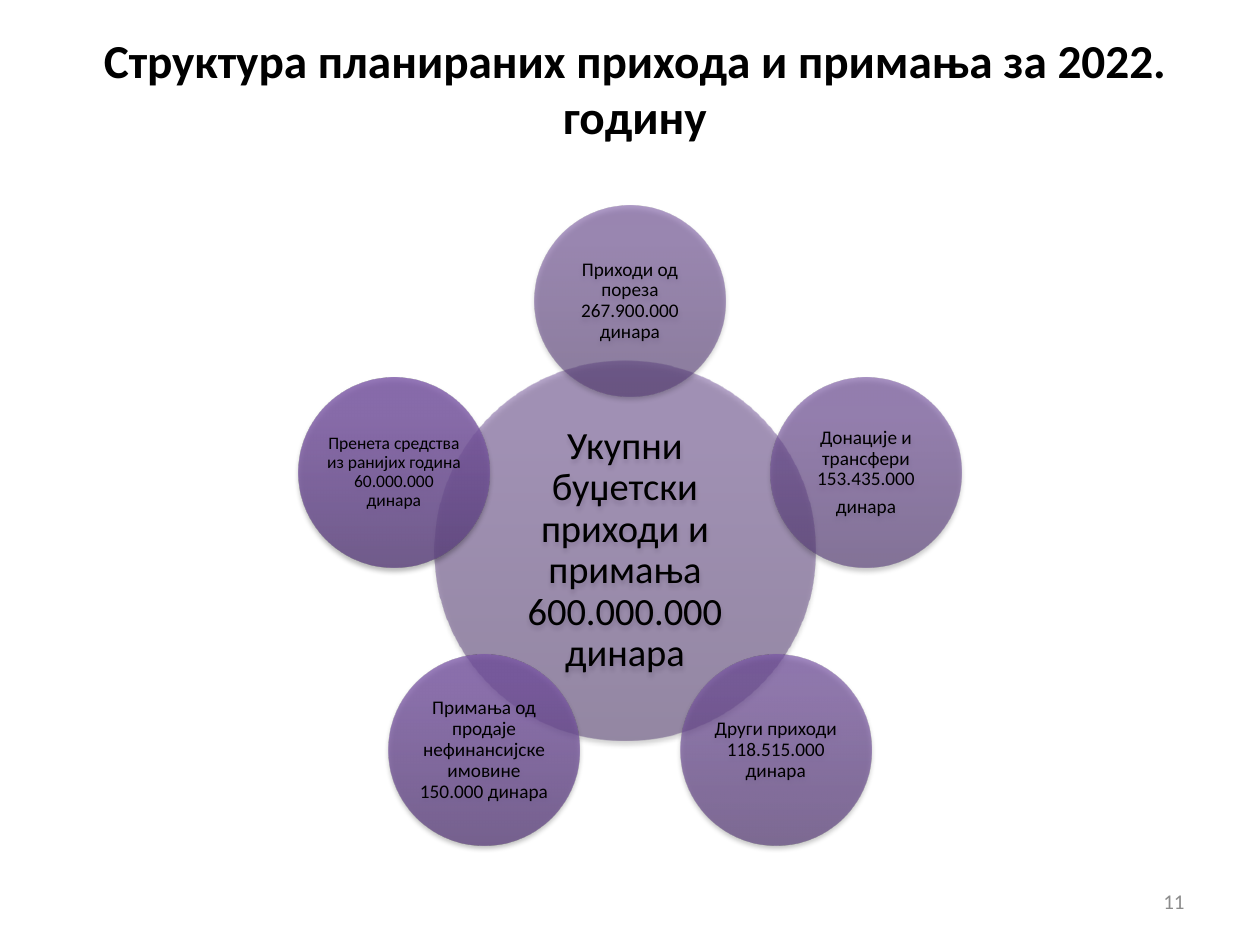
import math

from lxml import etree
from pptx import Presentation
from pptx.dml.color import RGBColor
from pptx.enum import shapes, text
from pptx.oxml import ns
from pptx.util import Inches, Pt

BLACK = RGBColor(0, 0, 0)
GRAY = RGBColor(0x8C, 0x8C, 0x8C)
FONT = "Calibri"

TITLE = "Структура планираних прихода и примања за 2022. годину"
PAGE_NUMBER = "11"

# Paragraphs, text size, gradient colours from bottom to top, opacity in percent
TOTAL = (["Укупни буџетски приходи и примања 600.000.000 динара"], 22,
         ("563D74", "705097", "704F99"), 50)
# Clockwise from the top
SOURCES = [
    (["Приходи од пореза 267.900.000 динара"], 11,
     ("583E77", "72519A", "73509C"), 56),
    (["Донације и трансфери 153.435.000", "динара"], 11,
     ("5A407A", "75539E", "7551A0"), 62),
    (["Други приходи 118.515.000 динара"], 11,
     ("5C417C", "7754A1", "7753A4"), 68),
    (["Примања од продаје нефинансијске имовине 150.000 динара"], 11,
     ("5E427E", "7956A4", "7A55A6"), 74),
    (["Пренета средства из ранијих година 60.000.000 динара"], 10,
     ("5F4580", "7C59A6", "7C58A8"), 80),
]
GRADIENT_STOPS = (0, 80, 100)

TOTAL_CENTER = (4.96, 4.37)
TOTAL_DIAMETER = 3.02
RING_CENTER = (5, 4.36)
RING_RADIUS = 1.97
SOURCE_DIAMETER = 1.51


def add_child(parent, tag, **attributes):
    child = etree.SubElement(parent, ns.qn(tag))
    for name, value in attributes.items():
        child.set(name, str(value))
    return child


def add_color(parent, color, opacity):
    element = add_child(parent, "a:srgbClr", val=color)
    add_child(element, "a:alpha", val=opacity * 1000)


def set_gradient(shape, colors, opacity):
    shape.fill.gradient()
    gradient = shape.element.spPr.find(ns.qn("a:gradFill"))
    for child in list(gradient):
        gradient.remove(child)
    stops = add_child(gradient, "a:gsLst")
    for position, color in zip(GRADIENT_STOPS, colors):
        add_color(add_child(stops, "a:gs", pos=position * 1000), color, opacity)
    add_child(gradient, "a:lin", ang=270 * 60000, scaled=0)


def set_soft_shadow(shape):
    shape.shadow.inherit = False
    effects = shape.element.spPr.find(ns.qn("a:effectLst"))
    shadow = add_child(effects, "a:outerShdw", blurRad=Pt(3.1), dist=Pt(1.8),
                       dir=90 * 60000, rotWithShape=0)
    add_color(shadow, "000000", 35)


def write(frame, paragraphs, size, color, alignment, bold=False):
    frame.word_wrap = True
    frame.vertical_anchor = text.MSO_ANCHOR.MIDDLE
    for index, content in enumerate(paragraphs):
        paragraph = frame.add_paragraph() if index else frame.paragraphs[0]
        paragraph.alignment = alignment
        run = paragraph.add_run()
        run.text = content
        run.font.name = FONT
        run.font.size = Pt(size)
        run.font.bold = bold
        run.font.color.rgb = color


def add_text_box(slide, box, *style, **options):
    shape = slide.shapes.add_textbox(*map(Inches, box))
    write(shape.text_frame, *style, **options)


def add_circle(slide, center, diameter, inset, item):
    paragraphs, size, colors, opacity = item
    left, top = (value - diameter / 2 for value in center)
    circle = slide.shapes.add_shape(
        shapes.MSO_SHAPE.OVAL, Inches(left), Inches(top),
        Inches(diameter), Inches(diameter))
    circle.line.fill.background()
    set_gradient(circle, colors, opacity)
    set_soft_shadow(circle)

    frame = circle.text_frame
    frame.margin_left = frame.margin_right = Inches(inset)
    frame.margin_top = frame.margin_bottom = Inches(inset)
    write(frame, paragraphs, size, BLACK, text.PP_ALIGN.CENTER)
    for paragraph in frame.paragraphs:
        paragraph.line_spacing = 0.9
        paragraph.space_after = Pt(round(size * 0.35, 1))


def main():
    presentation = Presentation()
    presentation.slide_width = Inches(10)
    presentation.slide_height = Inches(7.5)
    slide = presentation.slides.add_slide(presentation.slide_layouts[6])

    add_text_box(slide, (0.54, 0.27, 9, 0.85), [TITLE], 27, BLACK,
                 text.PP_ALIGN.CENTER, bold=True)
    add_text_box(slide, (7.17, 6.95, 2.33, 0.4), [PAGE_NUMBER], 12, GRAY,
                 text.PP_ALIGN.RIGHT)

    add_circle(slide, TOTAL_CENTER, TOTAL_DIAMETER, 0.03, TOTAL)
    for index, source in enumerate(SOURCES):
        angle = 2 * math.pi * index / len(SOURCES)
        center = (RING_CENTER[0] + RING_RADIUS * math.sin(angle),
                  RING_CENTER[1] - RING_RADIUS * math.cos(angle))
        add_circle(slide, center, SOURCE_DIAMETER, 0, source)

    presentation.save("out.pptx")


if __name__ == "__main__":
    main()
